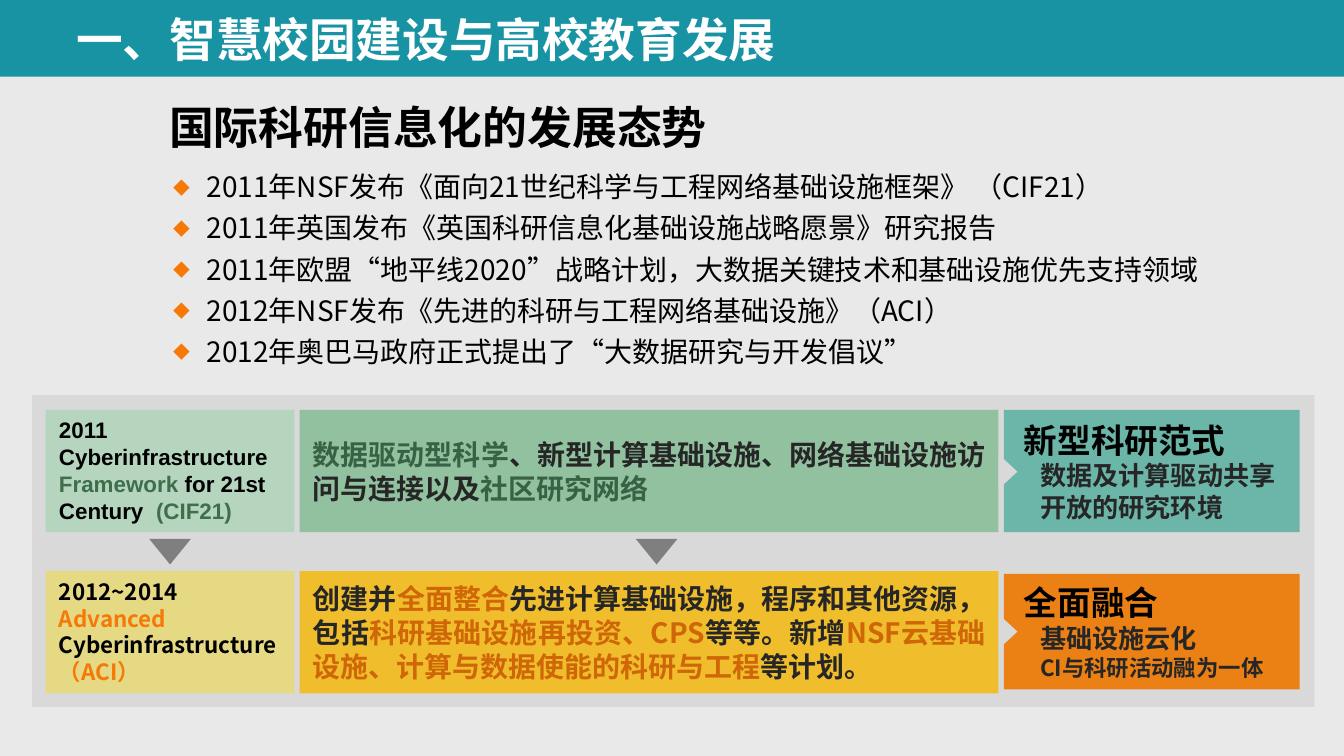
from dataclasses import dataclass

from lxml import etree
from pptx import Presentation
from pptx.dml.color import RGBColor
from pptx.enum import shapes, text
from pptx.oxml import ns
from pptx.util import Inches, Pt

CJK = "Noto Sans CJK SC"
BACKGROUND = RGBColor(0xE9, 0xE9, 0xE9)
TEAL = RGBColor(0x18, 0x93, 0xA4)
PANEL = RGBColor(0xD9, 0xD9, 0xD9)
ARROW_GRAY = RGBColor(0x7F, 0x7F, 0x7F)
BLACK = RGBColor(0, 0, 0)
WHITE = RGBColor(0xFF, 0xFF, 0xFF)
DARK = RGBColor(0x26, 0x26, 0x26)
ORANGE = RGBColor(0xF6, 0x79, 0x08)
RUST = RGBColor(0xCF, 0x66, 0x07)
GREEN = RGBColor(0x38, 0x62, 0x44)
LABEL_GREEN = RGBColor(0x3E, 0x6E, 0x4C)
LINE_RATIO = 1.2
CARD_HEIGHT = 0.91

Run = tuple[str, RGBColor]


@dataclass
class Line:
    runs: list[Run]
    size: float
    indent: float = 0


@dataclass
class Card:
    left: float
    top: float
    width: float
    fill: RGBColor
    lines: list[Line]
    height: float = CARD_HEIGHT
    font: str = CJK
    anchor: text.MSO_ANCHOR = text.MSO_ANCHOR.MIDDLE
    align: text.PP_ALIGN = text.PP_ALIGN.LEFT


@dataclass
class Arrow:
    left: float
    top: float
    width: float
    height: float
    rotation: int
    fill: RGBColor


def add_bullet(paragraph, color: RGBColor) -> None:
    props = paragraph._p.get_or_add_pPr()
    props.set("marL", str(Inches(0.72)))
    props.set("indent", str(Inches(-0.25)))
    bullet_color = etree.SubElement(props, ns.qn("a:buClr"))
    etree.SubElement(bullet_color, ns.qn("a:srgbClr"), val=str(color))
    etree.SubElement(props, ns.qn("a:buSzPct"), val="60000")
    etree.SubElement(props, ns.qn("a:buFont"), typeface=CJK)
    etree.SubElement(props, ns.qn("a:buChar"), char="◆")


def write(frame, lines: list[Line], *, font: str = CJK, bold: bool = True,
          anchor=text.MSO_ANCHOR.TOP, align=text.PP_ALIGN.LEFT,
          spacing: float | None = None, bullet: RGBColor | None = None) -> None:
    """Fill a text frame; a run ending in a newline is followed by a line break."""
    frame.word_wrap = True
    frame.vertical_anchor = anchor
    for index, line in enumerate(lines):
        paragraph = frame.paragraphs[0] if index == 0 else frame.add_paragraph()
        paragraph.alignment = align
        paragraph.line_spacing = Pt(spacing or round(line.size * LINE_RATIO, 1))
        if line.indent:
            paragraph._p.get_or_add_pPr().set("marL", str(Inches(line.indent)))
        if bullet is not None:
            add_bullet(paragraph, bullet)
        for words, color in line.runs:
            run = paragraph.add_run()
            run.text = words.rstrip("\n")
            run.font.size = Pt(line.size)
            run.font.bold = bold
            run.font.color.rgb = color
            run.font.name = font
            etree.SubElement(run._r.get_or_add_rPr(), ns.qn("a:ea"), typeface=font)
            if words.endswith("\n"):
                paragraph.add_line_break()


def add_filled(slide, kind, left: float, top: float, width: float, height: float,
               fill: RGBColor):
    shape = slide.shapes.add_shape(
        kind, Inches(left), Inches(top), Inches(width), Inches(height))
    shape.shadow.inherit = False
    shape.fill.solid()
    shape.fill.fore_color.rgb = fill
    shape.line.fill.background()
    return shape


def add_rect(slide, left: float, top: float, width: float, height: float,
             fill: RGBColor):
    return add_filled(slide, shapes.MSO_SHAPE.RECTANGLE, left, top, width, height, fill)


def add_card(slide, card: Card) -> None:
    shape = add_rect(slide, card.left, card.top, card.width, card.height, card.fill)
    write(shape.text_frame, card.lines, font=card.font, anchor=card.anchor,
          align=card.align)


def add_arrow(slide, arrow: Arrow) -> None:
    shape = add_filled(slide, shapes.MSO_SHAPE.ISOSCELES_TRIANGLE, arrow.left,
                       arrow.top, arrow.width, arrow.height, arrow.fill)
    shape.rotation = arrow.rotation


def add_text(slide, left: float, top: float, width: float, height: float,
             lines: list[Line], **style) -> None:
    box = slide.shapes.add_textbox(
        Inches(left), Inches(top), Inches(width), Inches(height))
    write(box.text_frame, lines, **style)


LABEL_X, CONTENT_X, RESULT_X = 0.34, 2.23, 7.47
LABEL_W, CONTENT_W, RESULT_W = 1.85, 5.2, 2.2
ROW_2011, ROW_2012 = 3.05, 4.25
HEADING_INDENT, DETAIL_INDENT = 0.05, 0.17

BULLETS = [
    "2011年NSF发布《面向21世纪科学与工程网络基础设施框架》 （CIF21）",
    "2011年英国发布《英国科研信息化基础设施战略愿景》研究报告",
    "2011年欧盟“地平线2020”战略计划，大数据关键技术和基础设施优先支持领域",
    "2012年NSF发布《先进的科研与工程网络基础设施》（ACI）",
    "2012年奥巴马政府正式提出了“大数据研究与开发倡议”",
]

CARDS = [
    Card(LABEL_X, ROW_2012, LABEL_W, RGBColor(0xE5, 0xD9, 0x83), [
        Line([("2012~2014", BLACK)], 12),
        Line([("Advanced ", ORANGE), ("Cyberinfrastructure\n", BLACK),
              ("（ACI）", ORANGE)], 12),
    ], anchor=text.MSO_ANCHOR.TOP),
    Card(LABEL_X, ROW_2011, LABEL_W, RGBColor(0xB5, 0xD5, 0xBE), [
        Line([("2011", BLACK)], 12),
        Line([("Cyberinfrastructure ", BLACK), ("Framework ", LABEL_GREEN),
              ("for 21st Century  ", BLACK), ("(CIF21)", LABEL_GREEN)], 12),
    ], font="Arial", anchor=text.MSO_ANCHOR.TOP),
    Card(CONTENT_X, ROW_2011, CONTENT_W, RGBColor(0x91, 0xC1, 0x9F), [
        Line([("数据驱动型科学", GREEN),
              ("、新型计算基础设施、网络基础设施访问与连接以及", DARK),
              ("社区研究网络", GREEN)], 15),
    ], align=text.PP_ALIGN.JUSTIFY),
    Card(CONTENT_X, ROW_2012, CONTENT_W, RGBColor(0xF0, 0xBD, 0x2C), [
        Line([("创建并", DARK), ("全面整合", RUST),
              ("先进计算基础设施，程序和其他资源，包括", DARK),
              ("科研基础设施再投资、CPS", RUST), ("等等。新增", DARK),
              ("NSF云基础设施、计算与数据使能的科研与工程", RUST),
              ("等计划。", DARK)], 15),
    ], align=text.PP_ALIGN.JUSTIFY),
    Card(RESULT_X, ROW_2011, RESULT_W, RGBColor(0x6B, 0xB5, 0xA9), [
        Line([("新型科研范式", BLACK)], 18, HEADING_INDENT),
        Line([("数据及计算驱动共享", DARK)], 14, DETAIL_INDENT),
        Line([("开放的研究环境", DARK)], 14, DETAIL_INDENT),
    ]),
    Card(RESULT_X, 4.27, RESULT_W, RGBColor(0xEB, 0x80, 0x15), [
        Line([("全面融合", BLACK)], 18, HEADING_INDENT),
        Line([("基础设施云化", DARK)], 14, DETAIL_INDENT),
        Line([("CI与科研活动融为一体", DARK)], 12, DETAIL_INDENT),
    ], height=0.86),
]

DOWN_ARROWS = [Arrow(left, 4.01, 0.31, 0.19, 180, ARROW_GRAY) for left in (1.11, 4.73)]
RIGHT_ARROWS = [Arrow(7.37, top, 0.26, 0.14, 90, PANEL) for top in (3.44, 4.63)]


def main() -> None:
    deck = Presentation()
    deck.slide_width = Inches(10)
    deck.slide_height = deck.slide_width * 9 // 16
    slide = deck.slides.add_slide(deck.slide_layouts[6])
    slide.background.fill.solid()
    slide.background.fill.fore_color.rgb = BACKGROUND

    add_rect(slide, 0, 0, 10, 0.57, TEAL)
    add_rect(slide, 0.24, 2.94, 9.54, 2.32, PANEL)
    add_text(slide, 1.16, 0.68, 9, 0.94,
             [Line([("国际科研信息化的发展态势", BLACK)], 24)], spacing=30)
    add_text(slide, 0.72, 1.16, 9, 1.34,
             [Line([(item, BLACK)], 15) for item in BULLETS],
             bold=False, spacing=22, bullet=ORANGE)
    for card in CARDS:
        add_card(slide, card)
    for arrow in DOWN_ARROWS + RIGHT_ARROWS:
        add_arrow(slide, arrow)
    add_text(slide, 0.47, 0.03, 9, 0.5,
             [Line([("一、智慧校园建设与高校教育发展", WHITE)], 25)], spacing=30)
    deck.save("out.pptx")


if __name__ == "__main__":
    main()
